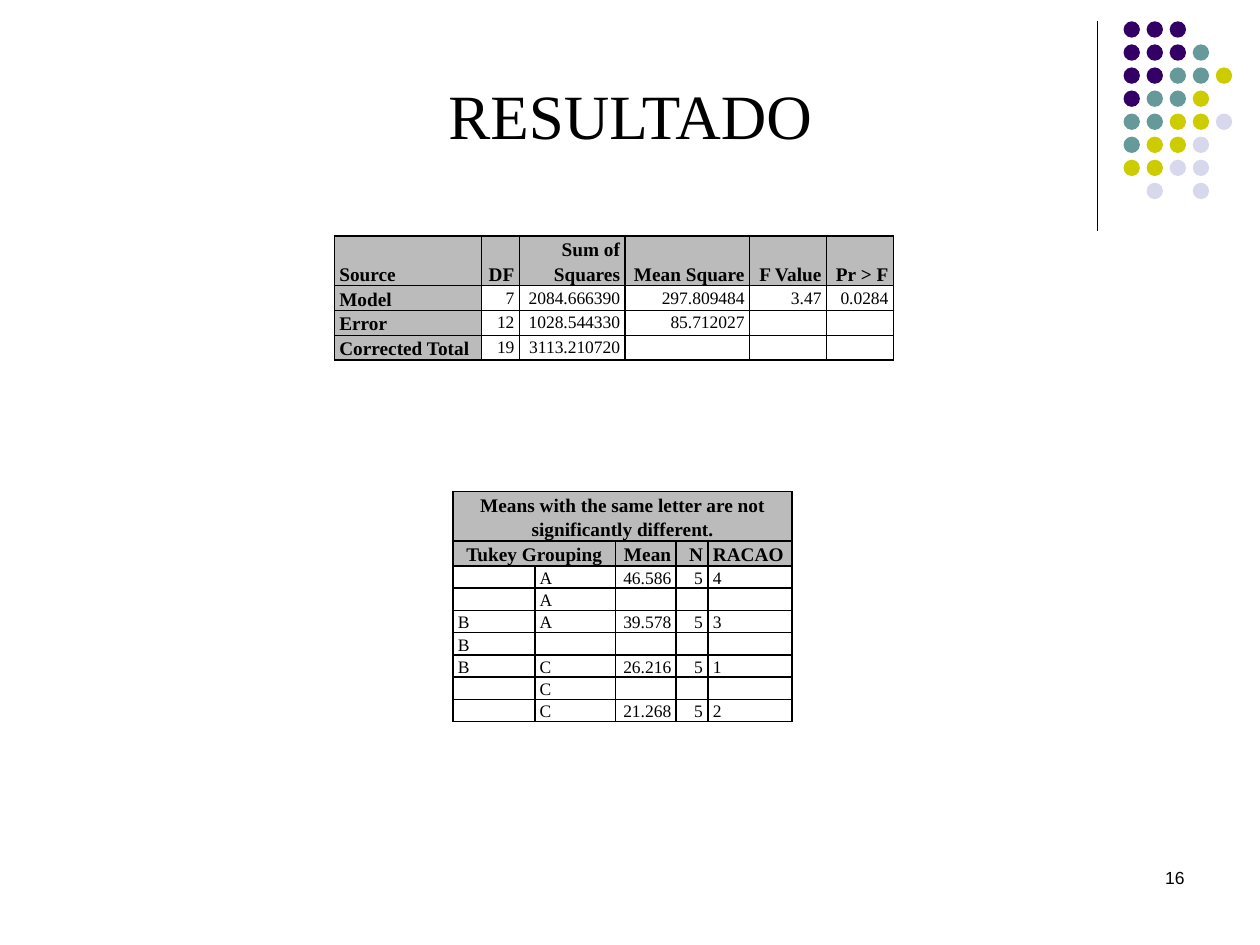
"""Build the RESULTADO slide with its variance and Tukey grouping tables."""
import pptx
import pptx.dml.color
import pptx.enum.shapes
import pptx.enum.text
import pptx.oxml.ns
import pptx.util
import lxml.etree
from pptx.util import Cm

THEME = {
    "serif": "Times New Roman", "sans": "Arial",
    "title": 36, "head": 11, "body": 10, "number": 10,
    "ink": "000000", "shade": "BBBBBB",
    "dots": {"P": "330066", "T": "669999", "Y": "CCCC00", "L": "D8D8EC"},
}
ALIGN = {
    "l": pptx.enum.text.PP_ALIGN.LEFT,
    "c": pptx.enum.text.PP_ALIGN.CENTER,
    "r": pptx.enum.text.PP_ALIGN.RIGHT,
}
TITLE = "RESULTADO"
PAGE_NUMBER = "16"
DOT_ROWS = ["PPP", "PPPT", "PPTTY", "PTTY", "TTYYL", "TYYL", "YYLL", " L L"]

VARIANCE = {
    "left": 6.74, "top": 4.76, "align": "lrrrrr",
    "columns": [2.97, 0.76, 2.13, 2.51, 1.55, 1.35],
    "heights": [1, 0.5, 0.5, 0.5],
    "head_rows": 1, "head_columns": 1, "merges": [],
    "rows": [
        ["Source", "DF", "Sum of Squares", "Mean Square", "F Value", "Pr > F"],
        ["Model", "7", "2084.666390", "297.809484", "3.47", "0.0284"],
        ["Error", "12", "1028.544330", "85.712027", "", ""],
        ["Corrected Total", "19", "3113.210720", "", "", ""],
    ],
}
GROUPING = {
    "left": 9.13, "top": 9.91, "align": "llrrl",
    "columns": [1.65, 1.63, 1.22, 0.64, 1.7],
    "heights": [1, 0.5] + [0.44] * 7,
    "head_rows": 2, "head_columns": 0, "merges": [(0, 0, 4), (1, 0, 1)],
    "rows": [
        ["Means with the same letter are not significantly different.", "", "", "", ""],
        ["Tukey Grouping", "", "Mean", "N", "RACAO"],
        ["", "A", "46.586", "5", "4"],
        ["", "A", "", "", ""],
        ["B", "A", "39.578", "5", "3"],
        ["B", "", "", "", ""],
        ["B", "C", "26.216", "5", "1"],
        ["", "C", "", "", ""],
        ["", "C", "21.268", "5", "2"],
    ],
}


def color(code):
    return pptx.dml.color.RGBColor.from_string(code)


def write(frame, text, size, font=THEME["serif"], bold=False, align="l", spacing=None):
    frame.word_wrap = True
    para = frame.paragraphs[0]
    para.alignment = ALIGN[align]
    para.line_spacing = spacing
    if not text:
        end = lxml.etree.SubElement(para._p, pptx.oxml.ns.qn("a:endParaRPr"))
        end.set("sz", str(size * 100))
        return
    span = para.add_run()
    span.text = text
    span.font.name = font
    span.font.size = pptx.util.Pt(size)
    span.font.bold = bold
    span.font.color.rgb = color(THEME["ink"])


def add_borders(cell):
    properties = cell._tc.get_or_add_tcPr()
    for side in ("lnL", "lnR", "lnT", "lnB"):
        line = lxml.etree.SubElement(properties, pptx.oxml.ns.qn(f"a:{side}"), w="12700")
        fill = lxml.etree.SubElement(line, pptx.oxml.ns.qn("a:solidFill"))
        lxml.etree.SubElement(fill, pptx.oxml.ns.qn("a:srgbClr"), val=THEME["ink"])


def add_results(page, data):
    rows, columns, heights = data["rows"], data["columns"], data["heights"]
    table = page.shapes.add_table(
        len(rows), len(columns), Cm(data["left"]), Cm(data["top"]),
        Cm(sum(columns)), Cm(sum(heights))).table
    table.first_row = table.horz_banding = False
    for column, width in zip(table.columns, columns):
        column.width = Cm(width)
    for row, height in zip(table.rows, heights):
        row.height = Cm(height)
    centred = {(row, first) for row, first, last in data["merges"]}
    for r, texts in enumerate(rows):
        for c, text in enumerate(texts):
            cell = table.cell(r, c)
            head = r < data["head_rows"] or c < data["head_columns"]
            cell.margin_left = cell.margin_right = Cm(0.1)
            cell.margin_top = cell.margin_bottom = 0
            if r < data["head_rows"]:
                cell.vertical_anchor = pptx.enum.text.MSO_ANCHOR.BOTTOM
            add_borders(cell)
            if head:
                cell.fill.solid()
                cell.fill.fore_color.rgb = color(THEME["shade"])
            else:
                cell.fill.background()
            write(cell.text_frame, text, THEME["head" if head else "body"], bold=head,
                  align="c" if (r, c) in centred else data["align"][c], spacing=1.15)
    for row, first, last in data["merges"]:
        table.cell(row, first).merge(table.cell(row, last))


def add_ornament(page):
    rule = page.shapes.add_connector(
        pptx.enum.shapes.MSO_CONNECTOR.STRAIGHT, Cm(22.12), Cm(0.43), Cm(22.12), Cm(4.65))
    rule.line.color.rgb = color(THEME["ink"])
    rule.line.width = pptx.util.Pt(0.75)
    lxml.etree.SubElement(rule._element.spPr, pptx.oxml.ns.qn("a:effectLst"))
    left, top, pitch, size = 22.65, 0.43, 0.465, 0.33
    for r, marks in enumerate(DOT_ROWS):
        for c, mark in enumerate(marks):
            if mark in THEME["dots"]:
                dot = page.shapes.add_shape(
                    pptx.enum.shapes.MSO_SHAPE.OVAL, Cm(left + c * pitch),
                    Cm(top + r * pitch), Cm(size), Cm(size))
                dot.shadow.inherit = False
                dot.fill.solid()
                dot.fill.fore_color.rgb = color(THEME["dots"][mark])
                dot.line.fill.background()


def main():
    deck = pptx.Presentation()
    deck.slide_width, deck.slide_height = Cm(25.4), Cm(19.05)
    page = deck.slides.add_slide(deck.slide_layouts[5])
    add_ornament(page)
    add_results(page, VARIANCE)
    add_results(page, GROUPING)
    title = page.shapes.title
    title.left, title.top, title.width, title.height = Cm(5.16), Cm(1.4), Cm(15.09), Cm(1.8)
    title.text_frame.vertical_anchor = pptx.enum.text.MSO_ANCHOR.MIDDLE
    write(title.text_frame, TITLE, THEME["title"], align="c")
    box = page.shapes.add_textbox(Cm(18.21), Cm(17.35), Cm(5.92), Cm(1.27))
    write(box.text_frame, PAGE_NUMBER, THEME["number"], font=THEME["sans"], align="r")
    deck.save("out.pptx")


if __name__ == "__main__":
    main()
